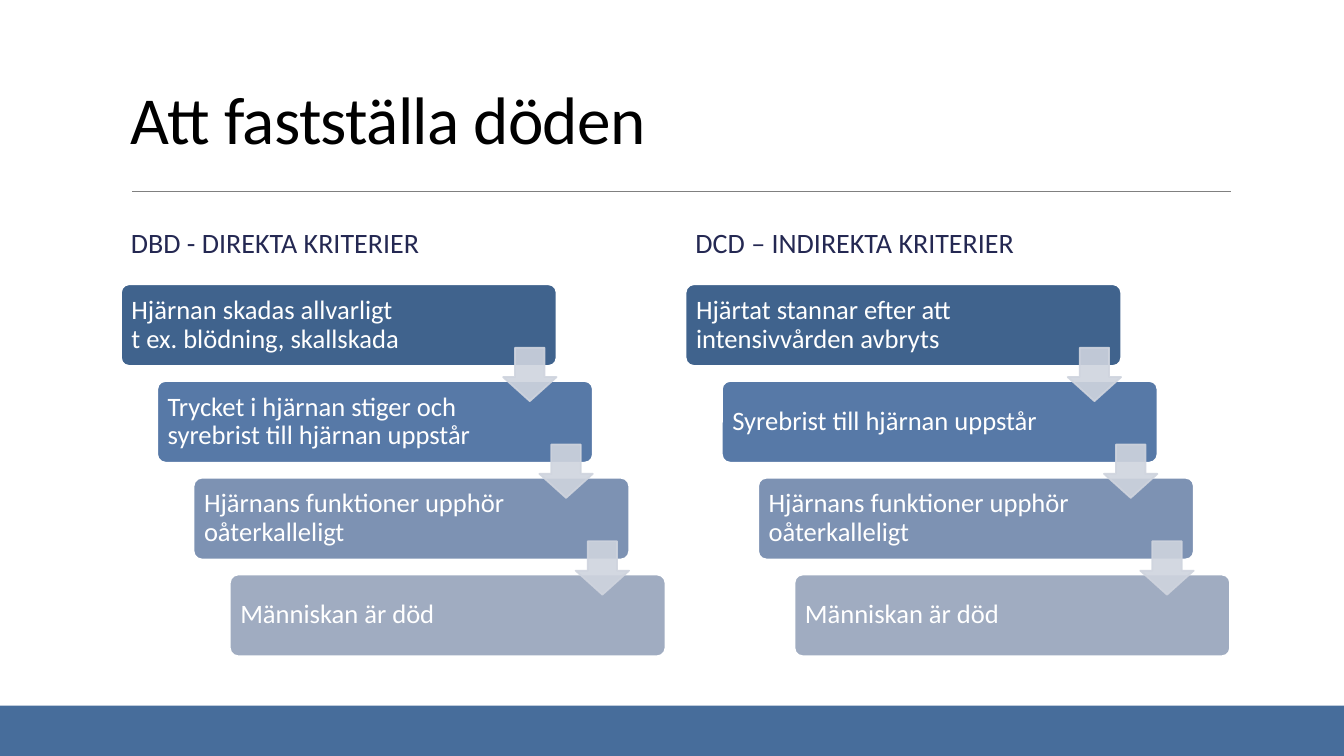
from dataclasses import dataclass

from lxml import etree
from pptx import Presentation
from pptx import util as u
from pptx.dml.color import RGBColor
from pptx.enum import shapes, text
from pptx.oxml.ns import qn

EMU_PER_PX = 9144
FONT = "Calibri"
STEP_COLORS = ("40638D", "5779A7", "7D92B3", "A0ACC1")
STEP_WIDTH, STEP_HEIGHT = 432, 81
STEP_TOP, STEP_SHIFT, STEP_PITCH = 282, 36, 96
ARROW_SIZE, ARROW_SHIFT, ARROW_DROP = 53, 379, 63


@dataclass(frozen=True)
class Box:
    left: int
    top: int
    width: int
    height: int

    def emu(self) -> list[u.Emu]:
        return [px(n) for n in (self.left, self.top, self.width, self.height)]


@dataclass(frozen=True)
class Staircase:
    left: int
    heading: str
    steps: tuple[str, ...]


STAIRCASES = (
    Staircase(120, "DBD - DIREKTA KRITERIER", (
        "Hjärnan skadas allvarligt \vt ex. blödning, skallskada",
        "Trycket i hjärnan stiger och syrebrist till hjärnan uppstår",
        "Hjärnans funktioner upphör oåterkalleligt",
        "Människan är död",
    )),
    Staircase(680, "DCD – INDIREKTA KRITERIER", (
        "Hjärtat stannar efter att intensivvården avbryts",
        "Syrebrist till hjärnan uppstår",
        "Hjärnans funktioner upphör oåterkalleligt",
        "Människan är död",
    )),
)


def px(length: int) -> u.Emu:
    return u.Emu(length * EMU_PER_PX)


def color(hex_code: str) -> RGBColor:
    return RGBColor.from_string(hex_code)


def add_block(slide, kind, box: Box, fill: str, line: str | None = None,
              adjustments: tuple[float, ...] = ()):
    shape = slide.shapes.add_shape(kind, *box.emu())
    shape.shadow.inherit = False
    shape.fill.solid()
    shape.fill.fore_color.rgb = color(fill)
    if line:
        shape.line.color.rgb = color(line)
        shape.line.width = u.Pt(1.25)
    else:
        shape.line.fill.background()
    for index, value in enumerate(adjustments):
        shape.adjustments[index] = value
    return shape


def write(shape, words: str, size: int, hex_code: str, spacing: float = 0.9,
          anchor=text.MSO_ANCHOR.MIDDLE):
    frame = shape.text_frame
    frame.word_wrap = True
    frame.vertical_anchor = anchor
    paragraph = frame.paragraphs[0]
    paragraph.text = words
    paragraph.alignment = text.PP_ALIGN.LEFT
    paragraph.line_spacing = spacing
    paragraph.font.name = FONT
    paragraph.font.size = u.Pt(size)
    paragraph.font.color.rgb = color(hex_code)
    return paragraph


def add_title(slide, words: str) -> None:
    title = slide.shapes.add_textbox(*Box(120, 66, 1100, 96).emu())
    paragraph = write(title, words, 48, "000000", 0.85, text.MSO_ANCHOR.BOTTOM)
    paragraph.runs[0]._r.get_or_add_rPr().set("spc", "-50")


def add_rule(slide) -> None:
    rule = slide.shapes.add_connector(
        shapes.MSO_CONNECTOR.STRAIGHT, px(131), px(190), px(1221), px(190))
    rule.line.color.rgb = color("808080")
    rule.line.width = u.Pt(0.5)
    etree.SubElement(rule._element.spPr, qn("a:effectLst"))


def add_step(slide, box: Box, words: str, fill: str) -> None:
    step = add_block(slide, shapes.MSO_SHAPE.ROUNDED_RECTANGLE, box, fill,
                     "FFFFFF", (0.1,))
    frame = step.text_frame
    frame.margin_left = frame.margin_top = frame.margin_bottom = px(8)
    frame.margin_right = px(98)
    write(step, words, 19, "FFFFFF")


def add_arrow(slide, step: Box) -> None:
    box = Box(step.left + ARROW_SHIFT, step.top + ARROW_DROP, ARROW_SIZE, ARROW_SIZE)
    arrow = add_block(slide, shapes.MSO_SHAPE.DOWN_ARROW, box, "CFD4DE",
                      "CFD4DE", (0.55, 0.45))
    for tint in arrow._element.spPr.iter(qn("a:srgbClr")):
        etree.SubElement(tint, qn("a:alpha"), val="90000")


def add_staircase(slide, staircase: Staircase) -> None:
    heading = slide.shapes.add_textbox(*Box(staircase.left, 202, 540, 81).emu())
    paragraph = write(heading, staircase.heading, 20, "242852")
    paragraph.space_before = u.Pt(12)
    paragraph.space_after = u.Pt(2)
    boxes = [
        Box(staircase.left + i * STEP_SHIFT, STEP_TOP + i * STEP_PITCH,
            STEP_WIDTH, STEP_HEIGHT)
        for i in range(len(staircase.steps))
    ]
    for box, words, fill in zip(boxes, staircase.steps, STEP_COLORS):
        add_step(slide, box, words, fill)
    for box in boxes[:-1]:
        add_arrow(slide, box)


def main() -> None:
    """Build the slide with two staircases of criteria and save it."""
    presentation = Presentation()
    presentation.slide_width, presentation.slide_height = px(1333), px(750)
    slide = presentation.slides.add_slide(presentation.slide_layouts[6])
    add_block(slide, shapes.MSO_SHAPE.RECTANGLE, Box(0, 700, 1333, 50), "476D9B")
    add_rule(slide)
    add_title(slide, "Att fastställa döden")
    for staircase in STAIRCASES:
        add_staircase(slide, staircase)
    presentation.save("out.pptx")


if __name__ == "__main__":
    main()
